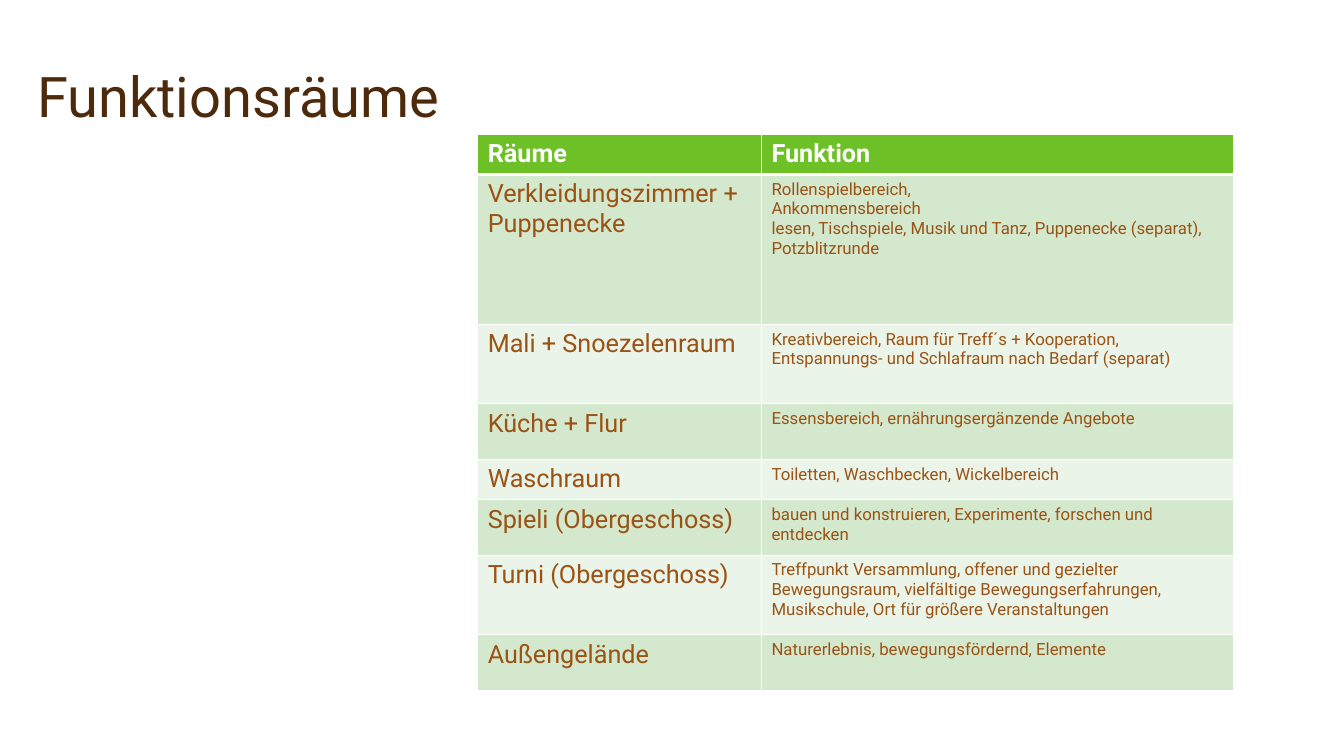
import dataclasses

import pptx
import pptx.dml.color
import pptx.enum.text
import pptx.oxml
import pptx.oxml.ns
import pptx.util


@dataclasses.dataclass(frozen=True)
class Theme:
    font: str = "Roboto"
    heading: str = "4D2A0B"
    body: str = "9A5315"
    white: str = "FFFFFF"
    header_fill: str = "6DC025"
    bands: tuple = ("D4E8CD", "EBF4E8")
    title_size: int = 40
    room_size: int = 18
    purpose_size: int = 12
    rule: int = 1
    header_rule: int = 3


class SlideBuilder:
    def __init__(self, slide, theme):
        self.slide = slide
        self.theme = theme

    def text(self, frame, lines, size, color, bold=False, spacing=1.0):
        formats = {"name": self.theme.font, "size": pptx.util.Pt(size), "bold": bold}
        for index, line in enumerate(lines):
            paragraph = frame.add_paragraph() if index else frame.paragraphs[0]
            paragraph.line_spacing = spacing
            run = paragraph.add_run()
            run.text = line
            for attribute, value in formats.items():
                setattr(run.font, attribute, value)
            run.font.color.rgb = pptx.dml.color.RGBColor.from_string(color)

    def title(self, heading, left, top, width, height):
        box = self.slide.shapes.add_textbox(*map(pptx.util.Cm, (left, top, width, height)))
        frame = box.text_frame
        formats = {
            "word_wrap": True,
            "vertical_anchor": pptx.enum.text.MSO_ANCHOR.BOTTOM,
        }
        for attribute, value in formats.items():
            setattr(frame, attribute, value)
        self.text(frame, [heading], self.theme.title_size, self.theme.heading, spacing=0.9)

    def border(self, cell, side, points):
        namespace = pptx.oxml.ns.nsdecls("a")
        line = pptx.oxml.parse_xml(
            f'<a:ln{side} {namespace} w="{pptx.util.Pt(points)}"><a:solidFill>'
            f'<a:srgbClr val="{self.theme.white}"/></a:solidFill></a:ln{side}>'
        )
        cell._tc.get_or_add_tcPr().append(line)

    def cell(self, cell, lines, size, color, fill, bold, rules):
        for side, points in rules.items():
            self.border(cell, side, points)
        cell.fill.solid()
        cell.fill.fore_color.rgb = pptx.dml.color.RGBColor.from_string(fill)
        self.text(cell.text_frame, lines, size, color, bold)

    def table(self, header, rooms, left, top, widths, heights):
        theme = self.theme
        grid = self.slide.shapes.add_table(
            len(heights), len(widths),
            *map(pptx.util.Cm, (left, top, sum(widths), sum(heights))),
        ).table
        for column, width in zip(grid.columns, widths):
            column.width = pptx.util.Cm(width)
        for row, height in zip(grid.rows, heights):
            row.height = pptx.util.Cm(height)
        rules = dict.fromkeys("LRTB", theme.rule)
        header_rules = rules | {"B": theme.header_rule}
        for column, heading in enumerate(header):
            self.cell(grid.cell(0, column), [heading], theme.room_size, theme.white,
                      theme.header_fill, True, header_rules)
        first_rules = rules | {"T": theme.header_rule}
        for index, (room, *purposes) in enumerate(rooms):
            fill = theme.bands[index % 2]
            room_rules = rules if index else first_rules
            contents = (([room], theme.room_size), (purposes, theme.purpose_size))
            for column, (lines, size) in enumerate(contents):
                self.cell(grid.cell(index + 1, column), lines, size, theme.body,
                          fill, False, room_rules)


ROOMS = [
    ("Verkleidungszimmer + Puppenecke", "Rollenspielbereich,", "Ankommensbereich",
     "lesen, Tischspiele, Musik und Tanz, Puppenecke (separat), Potzblitzrunde"),
    ("Mali + Snoezelenraum",
     "Kreativbereich, Raum für Treff´s + Kooperation, "
     "Entspannungs- und Schlafraum nach Bedarf (separat)"),
    ("Küche + Flur", "Essensbereich, ernährungsergänzende Angebote"),
    ("Waschraum", "Toiletten, Waschbecken, Wickelbereich"),
    ("Spieli (Obergeschoss)",
     "bauen und konstruieren, Experimente, forschen und entdecken"),
    ("Turni (Obergeschoss)",
     "Treffpunkt Versammlung, offener und gezielter Bewegungsraum, "
     "vielfältige Bewegungserfahrungen, Musikschule, "
     "Ort für größere Veranstaltungen"),
    ("Außengelände", "Naturerlebnis, bewegungsfördernd, Elemente"),
]


def main():
    presentation = pptx.Presentation()
    presentation.slide_width = pptx.util.Cm(33.87)
    presentation.slide_height = pptx.util.Cm(19.05)
    slide = presentation.slides.add_slide(presentation.slide_layouts[6])
    builder = SlideBuilder(slide, Theme())
    builder.title("Funktionsräume", 0.69, 0, 15.19, 3.38)
    builder.table(("Räume", "Funktion"), ROOMS, 12.04, 3.38, (7.15, 11.9),
                  (1, 3.78, 2, 1.4, 1, 1.4, 2, 1.4))
    presentation.save("out.pptx")


if __name__ == "__main__":
    main()
